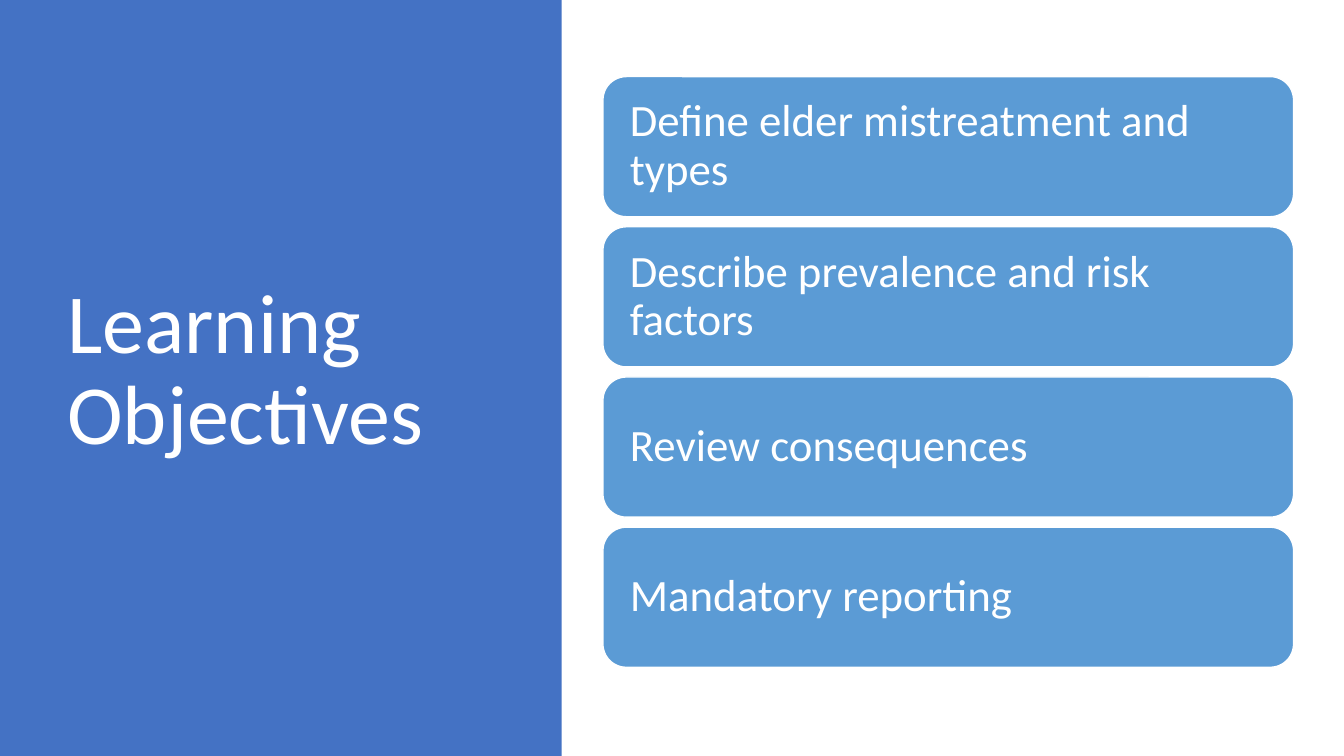
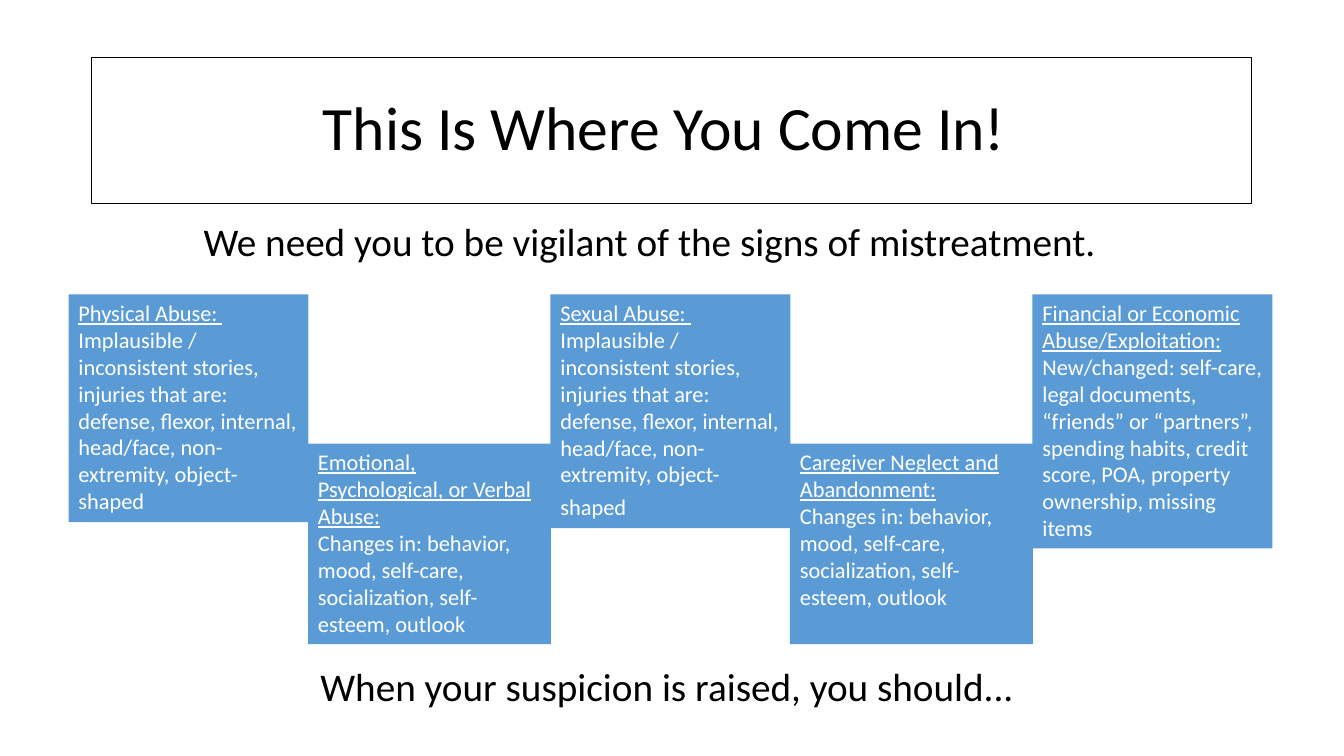
from pptx import Presentation
from pptx import util as u
from pptx.dml import color
from pptx.enum import shapes, text

WHITE, BLACK, PANEL, TILE = "FFFFFF", "000000", "4472C4", "5B9BD5"


def rgb(value):
    """Turn a hex string into a colour."""
    return color.RGBColor.from_string(value)


class Deck:
    """Hold the shared style and the current slide."""

    font = "Calibri"
    width, height = 13.33, 7.5

    def __init__(self):
        """Open an empty widescreen presentation."""
        self.presentation = Presentation()
        self.presentation.slide_width = u.Inches(self.width)
        self.presentation.slide_height = u.Inches(self.height)
        self.slide = None

    def new_slide(self):
        """Start a blank slide."""
        self.slide = self.presentation.slides.add_slide(self.presentation.slide_layouts[6])

    def box(self, at, fill=None, line=None, weight=0.75,
            kind=shapes.MSO_SHAPE.RECTANGLE):
        """Add a preset shape without a shadow."""
        shape = self.slide.shapes.add_shape(kind, *map(u.Inches, at))
        shape.shadow.inherit = False
        if fill:
            shape.fill.solid()
            shape.fill.fore_color.rgb = rgb(fill)
        else:
            shape.fill.background()
        if line:
            shape.line.color.rgb = rgb(line)
            shape.line.width = u.Pt(weight)
        else:
            shape.line.fill.background()
        return shape

    def style_run(self, run, size, ink):
        """Apply the shared font to a run."""
        run.font.name = self.font
        run.font.size = u.Pt(size)
        run.font.color.rgb = rgb(ink)

    def set_text(self, shape, lines, size, ink, align=text.PP_ALIGN.LEFT,
                 anchor=text.MSO_ANCHOR.TOP, spacing=1.0, inset=None):
        """Fill a shape with one paragraph per line."""
        frame = shape.text_frame
        frame.text = "\n".join(lines)
        frame.word_wrap = True
        frame.vertical_anchor = anchor
        if inset is not None:
            frame.margin_left = frame.margin_right = u.Inches(inset)
            frame.margin_top = frame.margin_bottom = u.Inches(inset)
        for paragraph in frame.paragraphs:
            paragraph.alignment = align
            paragraph.line_spacing = spacing
            for run in paragraph.runs:
                self.style_run(run, size, ink)
        return frame

    def label(self, at, words, size, ink=BLACK, **layout):
        """Add a plain text box."""
        shape = self.slide.shapes.add_textbox(*map(u.Inches, at))
        self.set_text(shape, [words], size, ink, **layout)

    def objective(self, at, words):
        """Add a rounded tile with a learning objective."""
        shape = self.box(at, TILE, WHITE, 1, shapes.MSO_SHAPE.ROUNDED_RECTANGLE)
        self.set_text(shape, [words], 32, WHITE, anchor=text.MSO_ANCHOR.MIDDLE,
                      spacing=0.9, inset=0.2)

    def card(self, at, heading, signs, tail=""):
        """Add a card with an underlined heading and its signs."""
        frame = self.set_text(self.box(at, TILE), [heading, signs], 16, WHITE)
        frame.paragraphs[0].runs[0].font.underline = True
        if tail:
            run = frame.paragraphs[1].add_run()
            run.text = tail
            self.style_run(run, 20, WHITE)


def build_objectives(deck):
    """Build the learning objectives slide."""
    deck.new_slide()
    deck.box((0, 0, 5.57, deck.height), PANEL)
    deck.label((0.57, 0.68, 4.16, 6.02), "Learning Objectives", 60, WHITE,
               anchor=text.MSO_ANCHOR.MIDDLE, spacing=0.9)
    objectives = ["Define elder mistreatment and types",
                  "Describe prevalence and risk factors",
                  "Review consequences",
                  "Mandatory reporting"]
    top, pitch = 0.76, 1.49
    for row, words in enumerate(objectives):
        deck.objective((5.98, top + row * pitch, 6.85, 1.39), words)


def build_signs(deck):
    """Build the signs of mistreatment slide."""
    deck.new_slide()
    title = deck.box((0.91, 0.57, 11.5, 1.45), line=BLACK)
    deck.set_text(title, ["This Is Where You Come In! "], 44, BLACK,
                  align=text.PP_ALIGN.CENTER, anchor=text.MSO_ANCHOR.MIDDLE, spacing=0.9)
    injuries = ("Implausible / inconsistent stories, injuries that are: defense, "
                "flexor, internal, head/face, non-extremity, object-shaped")
    changes = "Changes in: behavior, mood, self-care, socialization, self-esteem, outlook"
    finances = ("New/changed: self-care, legal documents, “friends” or “partners”, "
                "spending habits, credit score, POA, property ownership, missing items")
    cards = [(2.26, "Physical Abuse: ", injuries, ""),
             (1.99, "Emotional, Psychological, or Verbal Abuse:", changes, ""),
             (2.32, "Sexual Abuse: ", injuries, " "),
             (1.99, "Caregiver Neglect and Abandonment:", changes, ""),
             (2.52, "Financial or Economic Abuse/Exploitation:", finances, "")]
    first_centre, pitch = 1.87, 2.39
    for column, (height, heading, signs, tail) in enumerate(cards):
        top, width = (4.4, 2.41) if column % 2 else (2.92, 2.38)
        left = first_centre + column * pitch - width / 2
        deck.card((left, top, width, height), heading, signs, tail)
    deck.label((1.92, 2.11, 9.49, 0.57),
               "We need you to be vigilant of the signs of mistreatment. ", 28)
    deck.label((3.08, 6.52, 7.16, 0.57),
               "When your suspicion is raised, you should...", 28)


def main():
    """Build and save the deck."""
    deck = Deck()
    build_objectives(deck)
    build_signs(deck)
    deck.presentation.save("out.pptx")


if __name__ == "__main__":
    main()
